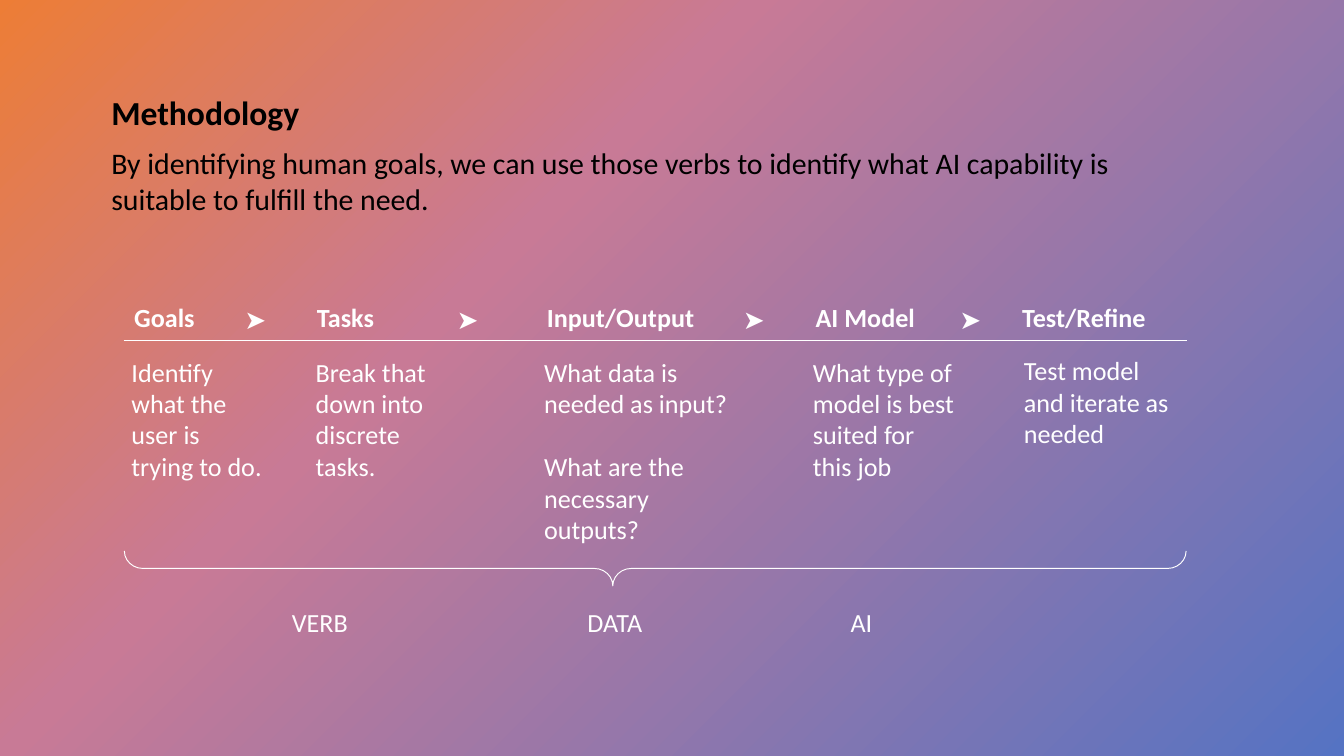
from pptx import Presentation
from pptx.dml.color import RGBColor
from pptx.enum.shapes import MSO_CONNECTOR, MSO_SHAPE
from pptx.enum.text import MSO_AUTO_SIZE, PP_ALIGN
from pptx.oxml import parse_xml
from pptx.oxml.ns import nsdecls
from pptx.util import Inches, Pt

LINE = MSO_CONNECTOR.STRAIGHT
BRACE = MSO_SHAPE.RIGHT_BRACE
GROW = MSO_AUTO_SIZE.SHAPE_TO_FIT_TEXT
LEFT, CENTER = PP_ALIGN.LEFT, PP_ALIGN.CENTER

COLORS = {"light": "FFFFFF", "dark": "000000",
          "blue": "5573C3", "pink": "C87A96", "orange": "ED7D36"}
CELL = 0.1  # inches: the slide is a grid of 100 columns


def grid(*cells):
    return [Inches(c * CELL) for c in cells]


def write(frame, text, size=14, color="light", bold=False,
          align=LEFT, gap=0, spacing=None):
    """Fill a text frame, one paragraph per line of text."""
    for i, line in enumerate(text.split("\n")):
        par = frame.paragraphs[0] if i == 0 else frame.add_paragraph()
        par.alignment = align
        if i:
            par.space_before = Pt(gap)
        if spacing:
            par.line_spacing = spacing
        run = par.add_run()
        run.text = line
        font = run.font
        font.name, font.size, font.bold = "Calibri", Pt(size), bold
        font.color.rgb = RGBColor.from_string(COLORS[color])


class Deck:
    """Holds the style and the current slide."""

    def __init__(self, wide, high):
        self.prs = Presentation()
        self.prs.slide_width, self.prs.slide_height = grid(wide, high)
        self.slide = self.prs.slides.add_slide(self.prs.slide_layouts[6])
        self.shapes = self.slide.shapes

    def backdrop(self, *stops):
        marks = "".join(
            f'<a:gs pos="{pos * 1000}"><a:srgbClr val="{COLORS[name]}"/></a:gs>'
            for pos, name in stops)
        back = parse_xml(
            f'<p:bg {nsdecls("p", "a")}><p:bgPr><a:gradFill rotWithShape="1">'
            f'<a:gsLst>{marks}</a:gsLst><a:path path="circle">'
            '<a:fillToRect l="100000" t="100000"/></a:path></a:gradFill>'
            '<a:effectLst/></p:bgPr></p:bg>')
        self.slide.element.cSld.insert(0, back)

    def text(self, text, x, y, w, h, wrap=False, **form):
        frame = self.shapes.add_textbox(*grid(x, y, w, h)).text_frame
        frame.word_wrap = wrap
        frame.auto_size = GROW
        write(frame, text, **form)

    def stroke(self, line):
        line.color.rgb = RGBColor.from_string(COLORS["light"])
        line.width = Pt(0.5)

    def rule(self, x, y, end):
        line = self.shapes.add_connector(LINE, *grid(x, y, end, y))
        line.element.spPr.append(parse_xml(f'<a:effectLst {nsdecls("a")}/>'))
        self.stroke(line.line)

    def brace(self, x, y, w, h, curve, tip):
        """Draw a brace that opens upward over the box x, y, w, h."""
        left, top = x + (w - h) / 2, y + (h - w) / 2
        shape = self.shapes.add_shape(BRACE, *grid(left, top, h, w))
        shape.rotation = 90
        shape.adjustments[0], shape.adjustments[1] = curve, tip
        shape.shadow.inherit = False
        shape.fill.background()
        self.stroke(shape.line)


# Head x, width, align; body x, y, width, height; texts
STEPS = [
    ("Goals", 9, 6.6, LEFT, 8.8, 26, 11.9, 10.4,
     "Identify what the user is trying to do."),
    ("Tasks", 22.6, 6.3, LEFT, 22.5, 26, 11.9, 10.4,
     "Break that down into discrete tasks."),
    ("Input/Output", 39.7, 13.1, LEFT, 39.5, 26, 15.8, 15.1,
     "What data is needed as input?\nWhat are the necessary outputs?"),
    ("AI Model", 59.7, 9.5, LEFT, 59.5, 26, 12.8, 10.4,
     "What type of model is best suited for this job"),
    ("Test/Refine", 75, 11.3, CENTER, 75.2, 25.9, 13.9, 8.1,
     "Test model and iterate as needed"),
]
ARROWS = [17.2, 33, 54.3, 70.4]
LABELS = [("VERB", 20.7, 6.2), ("DATA", 42.7, 6.1), ("AI", 62.3, 3.6)]


def main():
    deck = Deck(100, 56.25)
    deck.backdrop((0, "blue"), (64, "pink"), (100, "orange"))

    # Title and summary
    deck.text("Methodology", 7.3, 6.7, 84.1, 3.3, wrap=True,
              size=18, color="dark", bold=True, spacing=0.9)
    deck.text("By identifying human goals, we can use those verbs to identify "
              "what AI capability is suitable to fulfill the need.",
              7.3, 10.3, 77.7, 6.4, wrap=True, size=16, color="dark")

    # Steps, with arrows between them
    for head, x, w, align, left, top, wide, high, body in STEPS:
        deck.text(head, x, 21.9, w, 3.4, bold=True, align=align)
        deck.text(body, left, top, wide, high, wrap=True, gap=17)
    for x in ARROWS:
        deck.text("➤", x, 22.1, 4, 3.4)
    deck.rule(9.2, 25.35, 88.3)

    # Brace and the labels under it
    deck.brace(9.25, 41, 79, 2.6, 0.53, 0.54)
    for label, x, w in LABELS:
        deck.text(label, x, 44.6, w, 3.4, align=CENTER)

    deck.prs.save("out.pptx")


if __name__ == "__main__":
    main()
